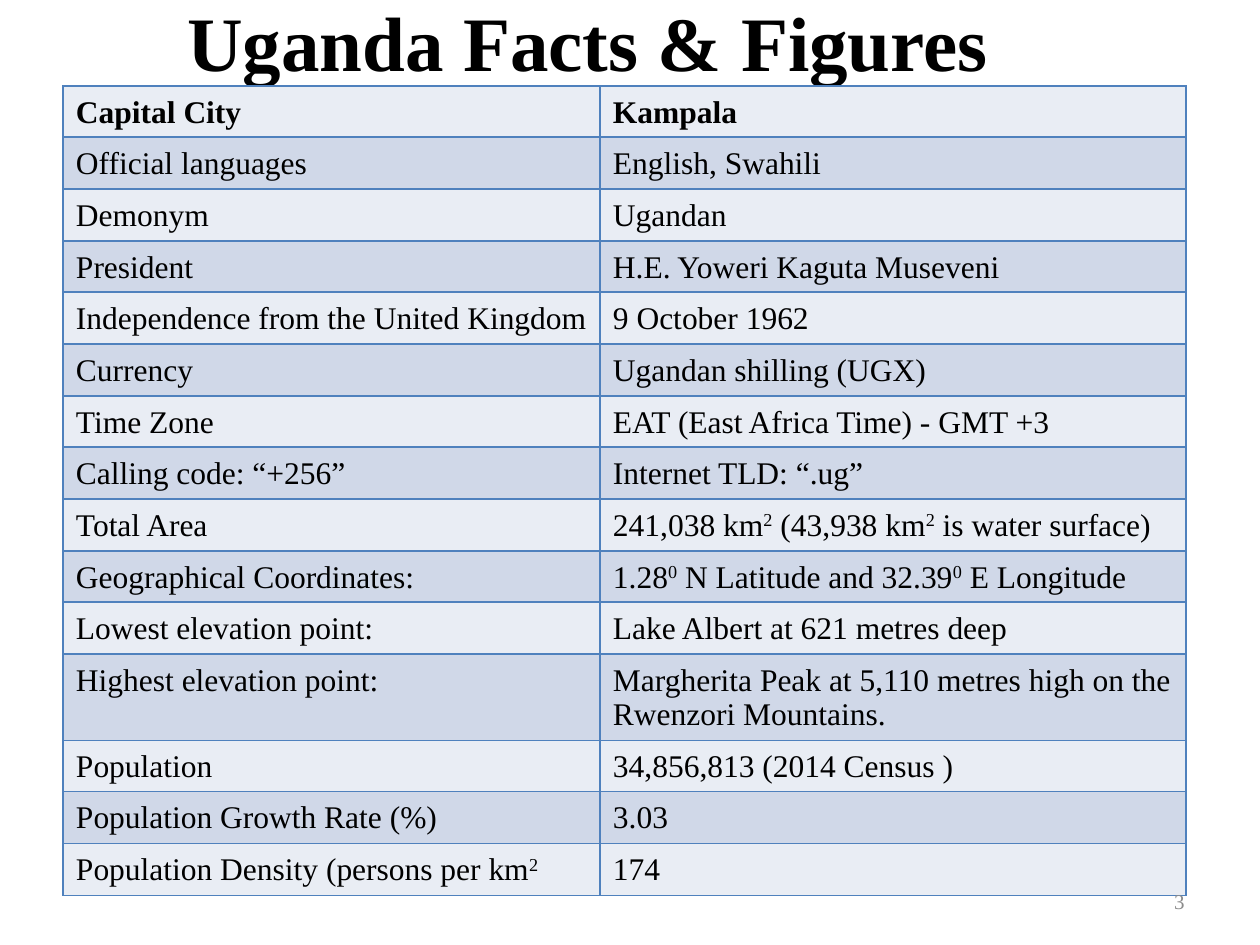
from lxml import etree
from pptx import Presentation
from pptx.dml.color import RGBColor
from pptx.enum.text import MSO_ANCHOR, PP_ALIGN
from pptx.oxml.ns import qn
from pptx.util import Emu, Pt

MIDDLE = MSO_ANCHOR.MIDDLE
CENTER, RIGHT = PP_ALIGN.CENTER, PP_ALIGN.RIGHT

PX = 914400 / 126
FONT = "Times New Roman"
COLORS = {
    "text": "000000",
    "number": "8C8C8C",
    "border": "4F81BD",
    "light": "E9EDF4",
    "dark": "D0D8E8",
}
FORMATS = {
    "title": {"size": Pt(44), "bold": True},
    "head": {"size": Pt(18), "bold": True},
    "body": {"size": Pt(18), "bold": False},
    "number": {"size": Pt(12), "bold": False},
}
CELL_MARGINS = {"margin_left": 13, "margin_right": 6, "margin_top": 9, "margin_bottom": 2}

# A caret raises the character that follows it
FACTS = [
    ("Capital City", "Kampala"),
    ("Official languages", "English, Swahili"),
    ("Demonym", "Ugandan"),
    ("President", "H.E. Yoweri Kaguta Museveni"),
    ("Independence from the United Kingdom", "9 October 1962"),
    ("Currency", "Ugandan shilling (UGX)"),
    ("Time Zone", "EAT (East Africa Time) - GMT +3"),
    ("Calling code: “+256”", "Internet TLD: “.ug”"),
    ("Total Area", "241,038 km^2 (43,938 km^2 is water surface)"),
    ("Geographical Coordinates:", "1.28^0 N Latitude and 32.39^0 E Longitude"),
    ("Lowest elevation point:", "Lake Albert at 621 metres deep"),
    ("Highest elevation point:",
     "Margherita Peak at 5,110 metres high on the Rwenzori Mountains."),
    ("Population", "34,856,813 (2014 Census )"),
    ("Population Growth Rate (%)", "3.03"),
    ("Population Density (persons per km^2", "174"),
]
TALL_ROW = 11


def px(value):
    return Emu(round(value * PX))


def row_height(index):
    # Every third row is a pixel lower, for an average of 51.67
    if index == TALL_ROW:
        return 86
    return 52 if index % 3 else 51


class SlideBuilder:
    def __init__(self, slide):
        self.slide = slide

    def run(self, paragraph, text, style, color="text", raised=False):
        run = paragraph.add_run()
        run.text = text
        run.font.name = FONT
        run.font.color.rgb = RGBColor.from_string(COLORS[color])
        for name, value in FORMATS[style].items():
            setattr(run.font, name, value)
        if raised:
            run._r.get_or_add_rPr().set("baseline", "30000")

    def rich_text(self, paragraph, text, style):
        first, *rest = text.split("^")
        self.run(paragraph, first, style)
        for part in rest:
            self.run(paragraph, part[0], style, raised=True)
            if part[1:]:
                self.run(paragraph, part[1:], style)

    def text(self, box, text, style, align, color="text"):
        frame = self.slide.shapes.add_textbox(*map(px, box)).text_frame
        frame.word_wrap = True
        frame.vertical_anchor = MIDDLE
        paragraph = frame.paragraphs[0]
        paragraph.alignment = align
        self.run(paragraph, text, style, color)

    def cell(self, cell, text, style, fill):
        for name, value in CELL_MARGINS.items():
            setattr(cell, name, px(value))
        self.rich_text(cell.text_frame.paragraphs[0], text, style)
        # Borders come before the fill in the cell properties
        properties = cell._tc.get_or_add_tcPr()
        for side in ("a:lnL", "a:lnR", "a:lnT", "a:lnB"):
            line = etree.SubElement(properties, qn(side), w=str(Pt(1)))
            solid = etree.SubElement(line, qn("a:solidFill"))
            etree.SubElement(solid, qn("a:srgbClr"), val=COLORS["border"])
        cell.fill.solid()
        cell.fill.fore_color.rgb = RGBColor.from_string(COLORS[fill])

    def table(self, left, top, widths, heights, rows):
        box = (left, top, sum(widths), sum(heights))
        table = self.slide.shapes.add_table(len(rows), len(widths), *map(px, box)).table
        for column, width in zip(table.columns, widths):
            column.width = px(width)
        for index, (row, height) in enumerate(zip(table.rows, heights)):
            row.height = px(height)
            style = "body" if index else "head"
            fill = "dark" if index % 2 else "light"
            for cell, text in zip(row.cells, rows[index]):
                self.cell(cell, text, style, fill)


def main():
    presentation = Presentation()
    presentation.slide_width, presentation.slide_height = px(1260), px(945)
    slide = presentation.slides.add_slide(presentation.slide_layouts[6])
    builder = SlideBuilder(slide)

    # Title
    builder.text((63, -14, 1050, 110), "Uganda Facts & Figures", "title", CENTER)

    # Facts table
    heights = [row_height(index) for index in range(len(FACTS))]
    builder.table(63, 86, (537, 586), heights, FACTS)

    # Slide number
    builder.text((903, 876, 294, 50), "3", "number", RIGHT, "number")

    presentation.save("out.pptx")


if __name__ == "__main__":
    main()
